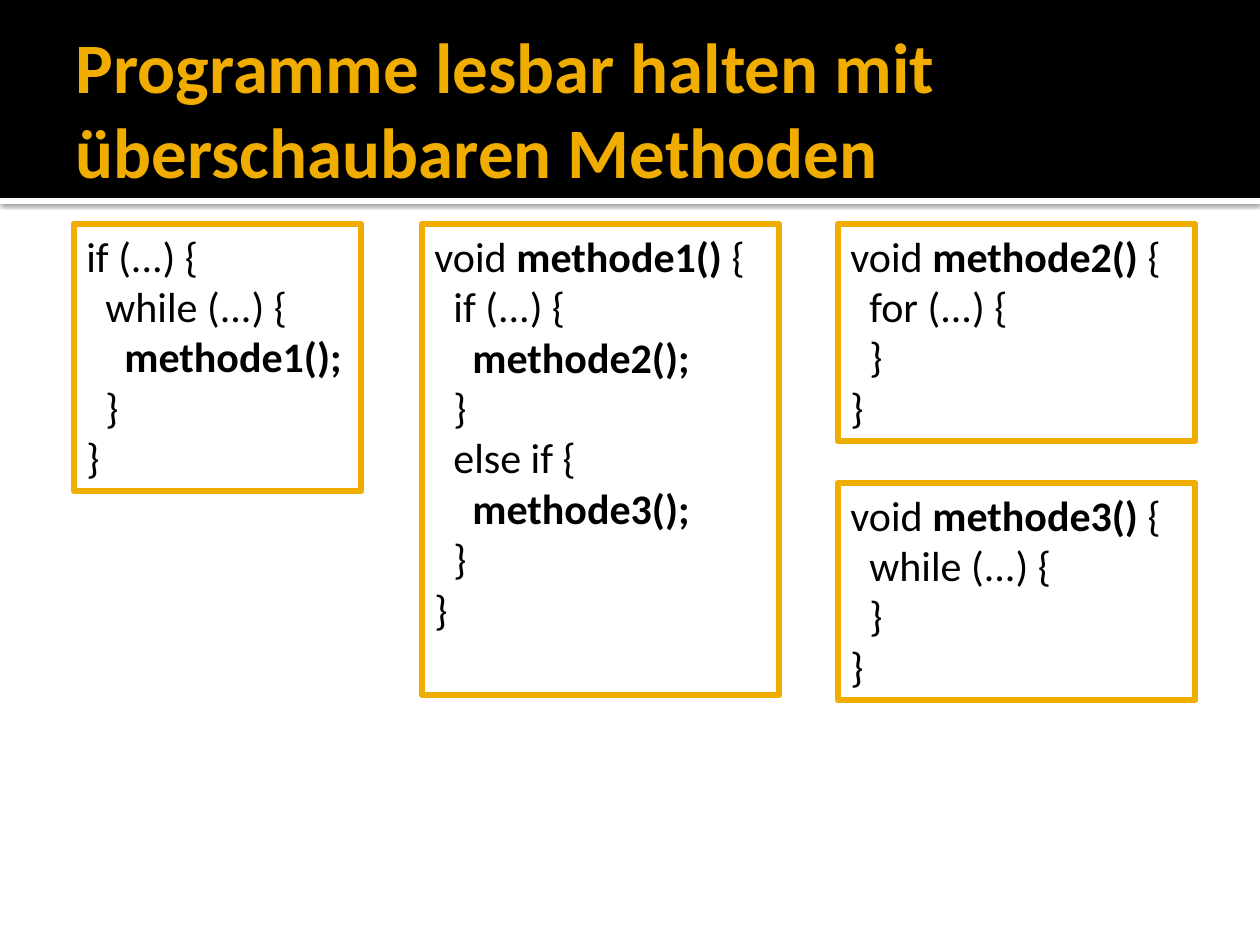
from lxml import etree
from pptx import Presentation, util as u
from pptx.dml.color import RGBColor
from pptx.enum import shapes, text
from pptx.oxml import ns

BLACK = RGBColor(0, 0, 0)
WHITE = RGBColor(255, 255, 255)
GOLD = RGBColor(0xF0, 0xAD, 0x00)
FONT = "Calibri"
STEP = 19  # code indent per level
TOP = 224
LEFT, MID, RIGHT = 74, 422, 838
WIDE = 357

# Each line is (indent level, text); ** surrounds bold text.
MAIN = [(0, "if (...) {"), (1, "while (...) {"), (2, "**methode1();**"),
        (1, "}"), (0, "}")]
FIRST = [(0, "void **methode1()** {"), (1, "if (...) {"),
         (2, "**methode2();**"), (1, "}"), (1, "else if {"),
         (2, "**methode3();**"), (1, "}"), (0, "}")]


def px(n):
    return u.Emu(round(n * 914400 / 126))


def loop(name, head):
    """Return the lines of a method that holds one empty loop."""
    return [(0, f"void **{name}() **{{"), (1, head + " (...) {"),
            (1, "}"), (0, "}")]


def add_rect(slide, box, fill):
    rect = slide.shapes.add_shape(shapes.MSO_SHAPE.RECTANGLE, *map(px, box))
    rect.shadow.inherit = False
    rect.fill.solid()
    rect.fill.fore_color.rgb = fill
    rect.line.fill.background()
    return rect


def add_shade(shape):
    """Give the shape a soft shadow straight below it."""
    glow = shape._element.spPr.find(ns.qn("a:effectLst"))
    shade = etree.SubElement(glow, ns.qn("a:outerShdw"), blurRad="31750",
                             dist="10160", dir="5400000", algn="tl",
                             rotWithShape="0")
    color = etree.SubElement(shade, ns.qn("a:srgbClr"), val=str(BLACK))
    etree.SubElement(color, ns.qn("a:alpha"), val="60000")


def set_font(para, size, color):
    para.alignment = text.PP_ALIGN.LEFT
    para.font.name = FONT
    para.font.size = u.Pt(size)
    para.font.color.rgb = color


def set_title(slide, words):
    title = slide.shapes.title
    title.left, title.top, title.width, title.height = map(
        px, (63, 21, 1134, 173))
    slide.shapes._spTree.append(title._element)  # in front of the banner
    frame = title.text_frame
    frame.text = words
    frame.auto_size = text.MSO_AUTO_SIZE.NONE
    frame.vertical_anchor = text.MSO_ANCHOR.MIDDLE
    frame.margin_left = u.Inches(0.1)
    frame.margin_right = u.Inches(0.05)
    para = frame.paragraphs[0]
    set_font(para, 40.5, GOLD)
    para.font.bold = True


def add_code(slide, box, lines):
    rect = add_rect(slide, box, WHITE)
    rect.line.color.rgb = GOLD
    rect.line.width = u.Pt(3.78)
    frame = rect.text_frame
    frame.word_wrap = True
    frame.vertical_anchor = text.MSO_ANCHOR.TOP
    frame.auto_size = text.MSO_AUTO_SIZE.SHAPE_TO_FIT_TEXT
    for i, (level, line) in enumerate(lines):
        para = frame.add_paragraph() if i else frame.paragraphs[0]
        set_font(para, 24, BLACK)
        para._p.get_or_add_pPr().set("marL", str(px(level * STEP)))
        for j, part in enumerate(line.split("**")):
            if part:
                run = para.add_run()
                run.text = part
                run.font.bold = j % 2 == 1


def main():
    deck = Presentation()
    deck.slide_width, deck.slide_height = px(1260), px(945)
    slide = deck.slides.add_slide(deck.slide_layouts[5])
    add_shade(add_rect(slide, (0, 198, 1260, 6), WHITE))
    add_rect(slide, (0, 0, 1260, 198), BLACK)
    set_title(slide, "Programme lesbar halten mit überschaubaren Methoden")
    add_code(slide, (LEFT, TOP, 287, 267), MAIN)
    add_code(slide, (MID, TOP, WIDE, 471), FIRST)
    add_code(slide, (RIGHT, TOP, WIDE, 217), loop("methode2", "for"))
    add_code(slide, (RIGHT, 483, WIDE, 217), loop("methode3", "while"))
    deck.save("out.pptx")


if __name__ == "__main__":
    main()
